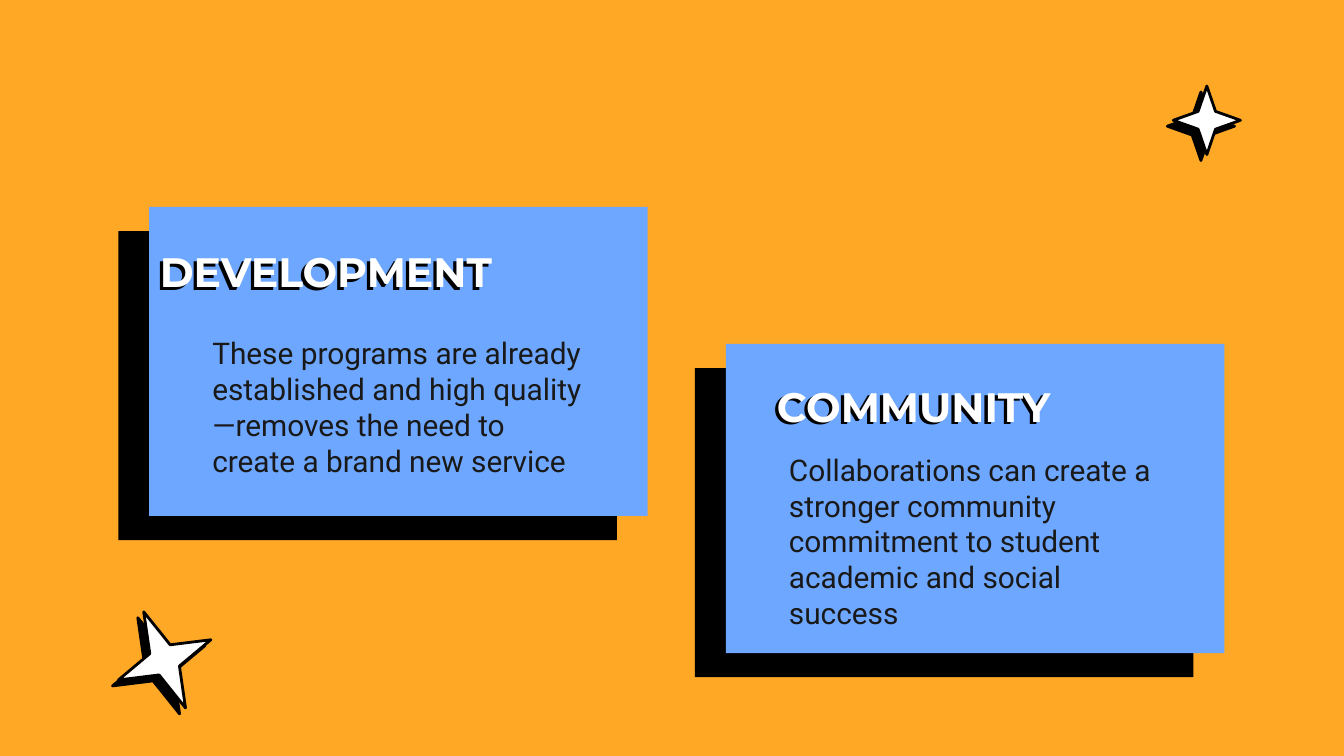
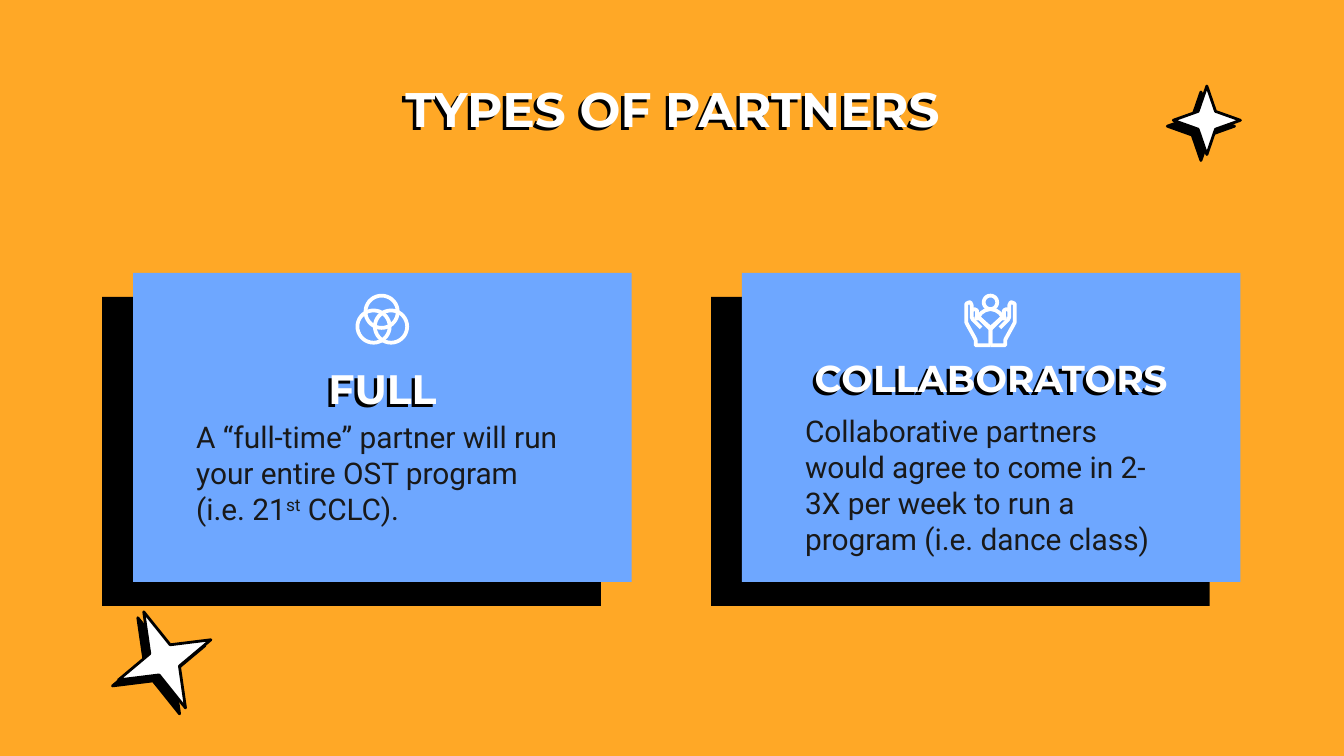
import math
from dataclasses import dataclass
from typing import Optional

import pptx
import pptx.dml.color
import pptx.enum.shapes
import pptx.enum.text
import pptx.oxml
import pptx.oxml.ns
import pptx.util
from pptx.util import Inches

Point = tuple[float, float]


@dataclass(frozen=True)
class Shadow:
    distance: float  # points
    angle: float  # degrees, clockwise from the right


@dataclass(frozen=True)
class Theme:
    background: str = "FFA826"
    card: str = "6EA7FF"
    white: str = "FFFFFF"
    black: str = "000000"
    body_color: str = "191919"
    heading_font: str = "Montserrat"
    body_font: str = "Roboto"
    title_size: float = 26
    heading_size: float = 22
    small_heading_size: float = 20
    body_size: float = 16
    star_line: float = 1.5
    icon_line: float = 2
    card_shadow: Shadow = Shadow(21, 142)
    star_shadow: Shadow = Shadow(4.5, 135)
    text_shadow: Shadow = Shadow(2.25, 142)


THEME = Theme()


@dataclass(frozen=True)
class Box:
    left: float
    top: float
    width: float
    height: float

    def lengths(self) -> list[int]:
        return [Inches(v) for v in (self.left, self.top, self.width, self.height)]


@dataclass(frozen=True)
class TextStyle:
    font: str
    size: float
    color: str
    bold: bool = False
    shadow: Optional[Shadow] = None


def heading_style(size: float) -> TextStyle:
    return TextStyle(THEME.heading_font, size, THEME.white, True, THEME.text_shadow)


TITLE = heading_style(THEME.title_size)
HEADING = heading_style(THEME.heading_size)
SMALL_HEADING = heading_style(THEME.small_heading_size)
BODY = TextStyle(THEME.body_font, THEME.body_size, THEME.body_color)


@dataclass(frozen=True)
class Run:
    text: str
    baseline: int = 0  # percent of the type size


@dataclass(frozen=True)
class Star:
    box: Box
    point_depth: float
    rotation: float = 0


@dataclass(frozen=True)
class Card:
    left: float
    top: float
    heading: str
    heading_box: Box
    body: list[Run]
    body_left: float
    body_top: float
    style: TextStyle = HEADING
    centered: bool = False


CARD_SIZE = (3.71, 2.3)
BODY_SIZE = (2.96, 1.31)
STARS = [Star(Box(8.73, 0.64, 0.5, 0.51), 0.183),
         Star(Box(0.85, 4.52, 0.75, 0.78), 0.156, 336.5)]

BENEFITS = [
    Card(1.11, 1.54, "DEVELOPMENT", Box(1.09, 1.63, 3.71, 0.78),
         [Run("These programs are already established and high quality—removes "
              "the need to create a brand new service")], 1.48, 2.37),
    Card(5.4, 2.56, "COMMUNITY", Box(5.68, 2.63, 3.13, 0.78),
         [Run("Collaborations can create a stronger community commitment to "
              "student academic and social success")], 5.77, 3.37),
]
PARTNERS = [
    Card(0.99, 2.03, "FULL", Box(0.99, 2.5, 3.71, 0.78),
         [Run("A “full-time” partner will run your entire OST program (i.e. 21"),
          Run("st", 30), Run(" CCLC).")], 1.36, 2.86, centered=True),
    Card(5.52, 2.03, "COLLABORATORS", Box(5.22, 2.58, 4.31, 0.46),
         [Run("Collaborative partners would agree to come in 2-3X per week to "
              "run a program (i.e. dance class)")], 5.89, 2.95, SMALL_HEADING, True),
]


def rgb(color: str) -> pptx.dml.color.RGBColor:
    return pptx.dml.color.RGBColor.from_string(color)


def add_shadow(shape, shadow: Shadow) -> None:
    shape.element.spPr.append(pptx.oxml.parse_xml(
        f'<a:effectLst {pptx.oxml.ns.nsdecls("a")}>'
        f'<a:outerShdw dist="{int(shadow.distance * 12700)}" '
        f'dir="{int(shadow.angle * 60000)}" algn="bl" rotWithShape="0">'
        f'<a:srgbClr val="{THEME.black}"/></a:outerShdw></a:effectLst>'))


# Shapes
def add_shadowed_shape(slide, kind, box: Box, color: str, shadow: Shadow):
    shape = slide.shapes.add_shape(kind, *box.lengths())
    shape.fill.solid()
    shape.fill.fore_color.rgb = rgb(color)
    shape.line.fill.background()
    add_shadow(shape, shadow)
    return shape


def add_star(slide, star: Star) -> None:
    shape = add_shadowed_shape(slide, pptx.enum.shapes.MSO_SHAPE.STAR_4_POINT,
                               star.box, THEME.white, THEME.star_shadow)
    shape.adjustments[0] = star.point_depth
    shape.rotation = star.rotation
    shape.line.color.rgb = rgb(THEME.black)
    shape.line.width = pptx.util.Pt(THEME.star_line)


# Text
def fill_placeholder(placeholder, box: Box, runs: list[Run], style: TextStyle,
                     centered: bool = False) -> None:
    placeholder.left, placeholder.top, placeholder.width, placeholder.height = box.lengths()
    # Bring the text in front of the cards
    placeholder.element.getparent().append(placeholder.element)
    if style.shadow:
        placeholder.fill.background()
        add_shadow(placeholder, style.shadow)
    frame = placeholder.text_frame
    frame.word_wrap = True
    frame.auto_size = pptx.enum.text.MSO_AUTO_SIZE.NONE
    frame.vertical_anchor = pptx.enum.text.MSO_ANCHOR.MIDDLE
    frame.margin_left = frame.margin_right = Inches(0.1)
    frame.margin_top = frame.margin_bottom = Inches(0.1)
    paragraph = frame.paragraphs[0]
    alignment = pptx.enum.text.PP_ALIGN
    paragraph.alignment = alignment.CENTER if centered else alignment.LEFT
    paragraph.space_before = pptx.util.Pt(0)
    properties = paragraph._p.get_or_add_pPr()
    properties.set("marL", "0")
    properties.set("indent", "0")
    properties.append(pptx.oxml.parse_xml(f'<a:buNone {pptx.oxml.ns.nsdecls("a")}/>'))
    for item in runs:
        add_run(paragraph, item, style)


def add_run(paragraph, item: Run, style: TextStyle) -> None:
    run = paragraph.add_run()
    run.text = item.text
    run.font.name = style.font
    run.font.size = pptx.util.Pt(style.size)
    run.font.bold = style.bold
    run.font.color.rgb = rgb(style.color)
    if item.baseline:
        run._r.get_or_add_rPr().set("baseline", str(item.baseline * 1000))


# Icons
def circle(center_x: float, center_y: float, radius: float, steps: int = 36) -> list[Point]:
    angles = [math.tau * step / steps for step in range(steps)]
    points = [(center_x + radius * math.cos(a), center_y + radius * math.sin(a))
              for a in angles]
    return points + points[:1]


def add_line_icon(slide, strokes: list[list[Point]]) -> None:
    lengths = [[(Inches(x), Inches(y)) for x, y in stroke] for stroke in strokes]
    builder = slide.shapes.build_freeform(*lengths[0][0])
    for index, stroke in enumerate(lengths):
        if index:
            builder.move_to(*stroke[0])
        builder.add_line_segments(stroke[1:], close=stroke[0] == stroke[-1])
    icon = builder.convert_to_shape()
    icon.shadow.inherit = False
    icon.fill.background()
    icon.line.color.rgb = rgb(THEME.white)
    icon.line.width = pptx.util.Pt(THEME.icon_line)


def add_circles_icon(slide) -> None:
    centers = [(2.84, 2.32), (2.78, 2.43), (2.91, 2.43)]
    add_line_icon(slide, [circle(x, y, 0.12) for x, y in centers])


def add_hands_icon(slide) -> None:
    middle, top = 7.37, 2.19
    # Left half, as distances from the middle and below the top
    half = [
        [(0, 0.38), (0.11, 0.38), (0.11, 0.34), (0.12, 0.32), (0.17, 0.23),
         (0.18, 0.21), (0.18, 0.08), (0.18, 0.07), (0.16, 0.06), (0.15, 0.06),
         (0.14, 0.08), (0.14, 0.17), (0.13, 0.19), (0.07, 0.25)],
        [(0.14, 0.12), (0.12, 0.11), (0.1, 0.12), (0.1, 0.18)],
        [(0.12, 0.18), (0.1, 0.18), (0.08, 0.18), (0.02, 0.24), (0, 0.26), (0, 0.38)],
        [(0, 0.11), (0.04, 0.12), (0.07, 0.14), (0.09, 0.17), (0, 0.25)],
    ]
    sides = [[(middle + side * x, top + y) for x, y in stroke]
             for side in (-1, 1) for stroke in half]
    add_line_icon(slide, [circle(middle, top + 0.06, 0.05)] + sides)


# Slides
def add_card_slide(presentation, cards: list[Card], title: Optional[str] = None):
    slide = presentation.slides.add_slide(
        presentation.slide_layouts.get_by_name("Comparison"))
    texts = {item.placeholder_format.idx: item for item in slide.placeholders}
    for card in reversed(cards):
        add_shadowed_shape(slide, pptx.enum.shapes.MSO_SHAPE.RECTANGLE,
                           Box(card.left, card.top, *CARD_SIZE),
                           THEME.card, THEME.card_shadow)
    if title:
        fill_placeholder(texts[0], Box(0.79, 0.49, 8.43, 0.63), [Run(title)], TITLE, True)
    else:
        texts[0].element.getparent().remove(texts[0].element)
    for card, index in zip(cards, (1, 3)):
        fill_placeholder(texts[index], card.heading_box, [Run(card.heading)],
                         card.style, card.centered)
    for card, index in zip(cards, (2, 4)):
        fill_placeholder(texts[index], Box(card.body_left, card.body_top, *BODY_SIZE),
                         card.body, BODY)
    for star in STARS:
        add_star(slide, star)
    return slide


def main() -> None:
    presentation = pptx.Presentation()
    presentation.slide_width = Inches(10)
    presentation.slide_height = Inches(10 * 9 / 16)
    background = presentation.slide_master.background.fill
    background.solid()
    background.fore_color.rgb = rgb(THEME.background)

    add_card_slide(presentation, BENEFITS)
    partners = add_card_slide(presentation, PARTNERS, "TYPES OF PARTNERS")
    add_circles_icon(partners)
    add_hands_icon(partners)
    presentation.save("out.pptx")


if __name__ == "__main__":
    main()
